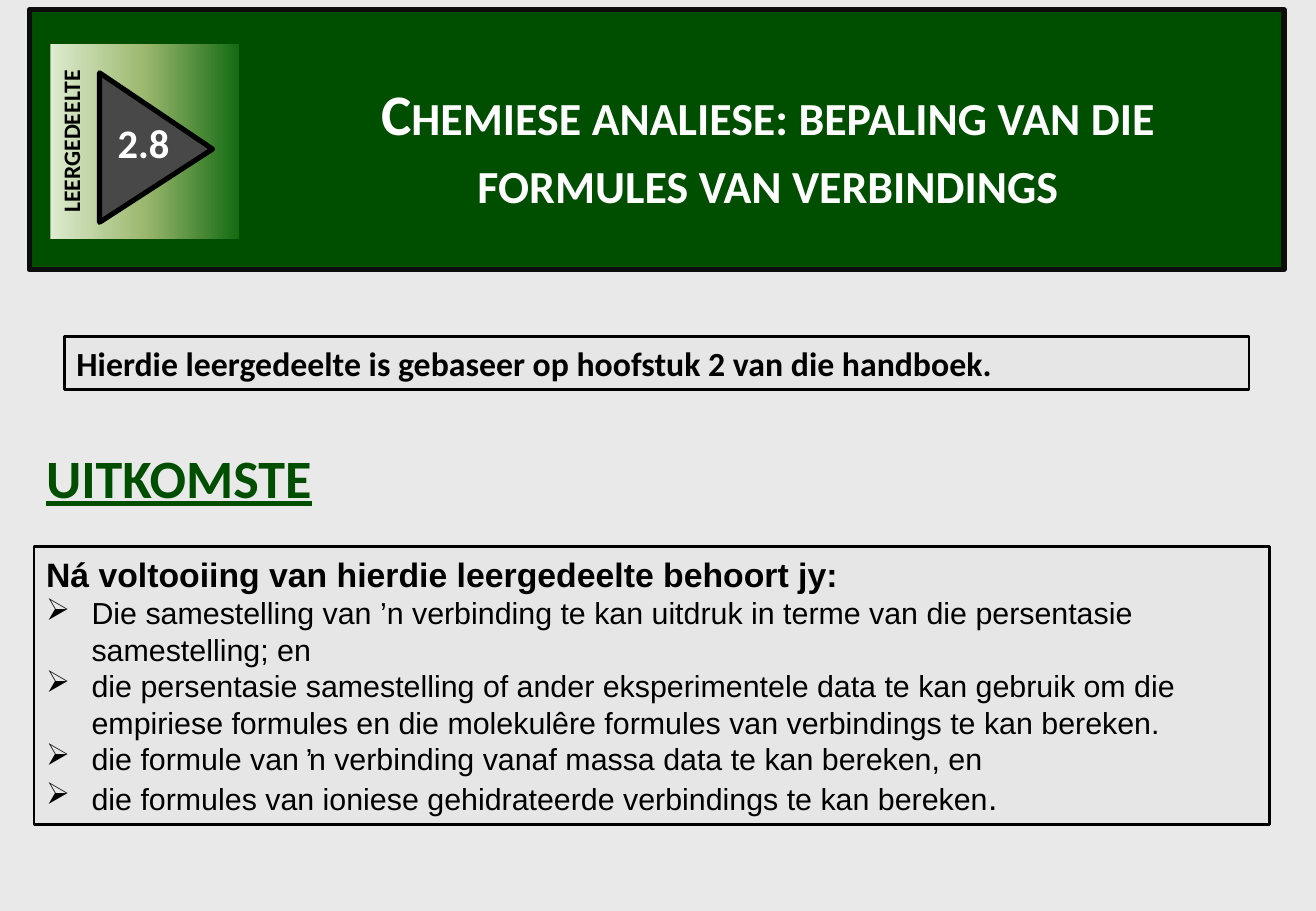
from copy import deepcopy

from pptx import Presentation
from pptx.dml.color import RGBColor
from pptx.enum.shapes import MSO_SHAPE
from pptx.enum.text import MSO_ANCHOR, MSO_AUTO_SIZE, PP_ALIGN
from pptx.oxml import parse_xml
from pptx.oxml.ns import nsdecls, qn
from pptx.util import Pt

COLORS = {
    "page": "E9E9E9", "green": "004E00", "banner edge": "0D0D0D",
    "panel": "E6E6E6", "grey": "484848", "black": "000000", "white": "FFFFFF",
}
BADGE_STOPS = [(0, "DDEBCF"), (0.5, "9CB86E"), (1, "156B13")]


def write(para, text, size, color="black", font="Calibri", bold=True,
          align=PP_ALIGN.LEFT, outline=None):
    """Add a formatted span; outline is a (colour, width) pair."""
    para.alignment = align
    span = para.add_run()
    span.text = text
    span.font.name = font
    span.font.size = Pt(size)
    span.font.bold = bold
    span.font.color.rgb = RGBColor.from_string(COLORS[color])
    if outline:
        edge, width = outline
        span.font.element.insert(0, parse_xml(
            f'<a:ln {nsdecls("a")} w="{Pt(width)}"><a:solidFill>'
            f'<a:srgbClr val="{COLORS[edge]}"/></a:solidFill></a:ln>'
        )) if hasattr(span.font, "element") else None
    return span


def add_box(kind, left, top, width, height, fill=None, line=None, line_width=1.5,
            anchor=MSO_ANCHOR.TOP):
    """Add a shape without shadow, ready for text."""
    box = page.shapes.add_shape(kind, Pt(left), Pt(top), Pt(width), Pt(height))
    box.shadow.inherit = False
    if fill:
        box.fill.solid()
        box.fill.fore_color.rgb = RGBColor.from_string(COLORS[fill])
    if line:
        box.line.color.rgb = RGBColor.from_string(COLORS[line])
        box.line.width = Pt(line_width)
    else:
        box.line.fill.background()
    box.text_frame.word_wrap = True
    box.text_frame.vertical_anchor = anchor
    return box


deck = Presentation()
deck.slide_width, deck.slide_height = Pt(780), Pt(540)
page = deck.slides.add_slide(deck.slide_layouts[5])
page.background.fill.solid()
page.background.fill.fore_color.rgb = RGBColor.from_string(COLORS["page"])

# Banner, placed behind the title
title = page.shapes.title
banner = add_box(MSO_SHAPE.RECTANGLE, 17.3, 5.8, 743.8, 154.1, "green", "banner edge", 3)
title.element.addprevious(banner.element)

# Title
title.left, title.top, title.width, title.height = Pt(164.2), Pt(42.5), Pt(581.8), Pt(90)
title.text_frame.word_wrap = True
title.text_frame.auto_size = MSO_AUTO_SIZE.SHAPE_TO_FIT_TEXT
title.text_frame.vertical_anchor = MSO_ANCHOR.TOP
span = write(title.text_frame.paragraphs[0],
             "Chemiese analiese: bepaling van die formules van verbindings",
             34, "white", align=PP_ALIGN.CENTER, outline=("white", 0.75))
span.font.underline = False
title.element.find(".//" + qn("a:rPr")).set("cap", "small")

# Section badge with a three-colour gradient
badge = add_box(MSO_SHAPE.RECTANGLE, 28.1, 28.1, 115.2, 111.6)
badge.rotation = 270
badge.fill.gradient()
badge.fill.gradient_angle = 270
stop_list = badge.element.find(".//" + qn("a:gsLst"))
stop_list.insert(1, deepcopy(stop_list[0]))
for stop, (position, color) in zip(badge.fill.gradient_stops, BADGE_STOPS):
    stop.position = position
    stop.color.rgb = RGBColor.from_string(color)
write(badge.text_frame.paragraphs[0], "LEERGEDEELTE", 14, align=PP_ALIGN.CENTER)

# Arrow and section number
arrow = add_box(MSO_SHAPE.ISOSCELES_TRIANGLE, 48.2, 54, 88.6, 67, "grey", "black", 3)
arrow.rotation = 90
arrow.adjustments[0] = 0.51
number = page.shapes.add_textbox(Pt(62.6), Pt(66.2), Pt(45.4), Pt(36.7))
number.text_frame.word_wrap = False
write(number.text_frame.paragraphs[0], "2.8", 24, "white")

# Outcomes heading
heading = page.shapes.add_textbox(Pt(20.2), Pt(259.9), Pt(208.1), Pt(46.1))
heading.text_frame.word_wrap = True
span = write(heading.text_frame.paragraphs[0], "UITKOMSTE", 32, "green",
             outline=("black", 0.25))
span.font.underline = True

# Outcomes list
outcomes = add_box(MSO_SHAPE.RECTANGLE, 20.2, 324, 732.2, 164.9, "panel", "black",
                   anchor=MSO_ANCHOR.MIDDLE)
write(outcomes.text_frame.paragraphs[0],
      "Ná voltooiing van hierdie leergedeelte behoort jy:", 20, font="Arial")
for outcome in [
    "Die samestelling van ’n verbinding te kan uitdruk in terme van die persentasie "
    "samestelling; en",
    "die persentasie samestelling of ander eksperimentele data te kan gebruik om die "
    "empiriese formules en die molekulêre formules van verbindings te kan bereken.",
    "die formule van ŉ verbinding vanaf massa data te kan bereken, en",
    "die formules van ioniese gehidrateerde verbindings te kan bereken",
]:
    para = outcomes.text_frame.add_paragraph()
    write(para, outcome, 18, font="Arial", bold=False)
    settings = para._p.get_or_add_pPr()
    settings.set("marL", str(Pt(27)))
    settings.set("indent", str(Pt(-27)))
    settings.append(parse_xml(f'<a:buChar {nsdecls("a")} char="➢"/>'))
write(para, ".", 20, font="Arial", bold=False)

# Chapter note
note = add_box(MSO_SHAPE.RECTANGLE, 38.2, 199.4, 702, 31.7, "panel", "black",
               anchor=MSO_ANCHOR.MIDDLE)
write(note.text_frame.paragraphs[0],
      "Hierdie leergedeelte is gebaseer op hoofstuk 2 van die handboek.", 20)

deck.save("out.pptx")
